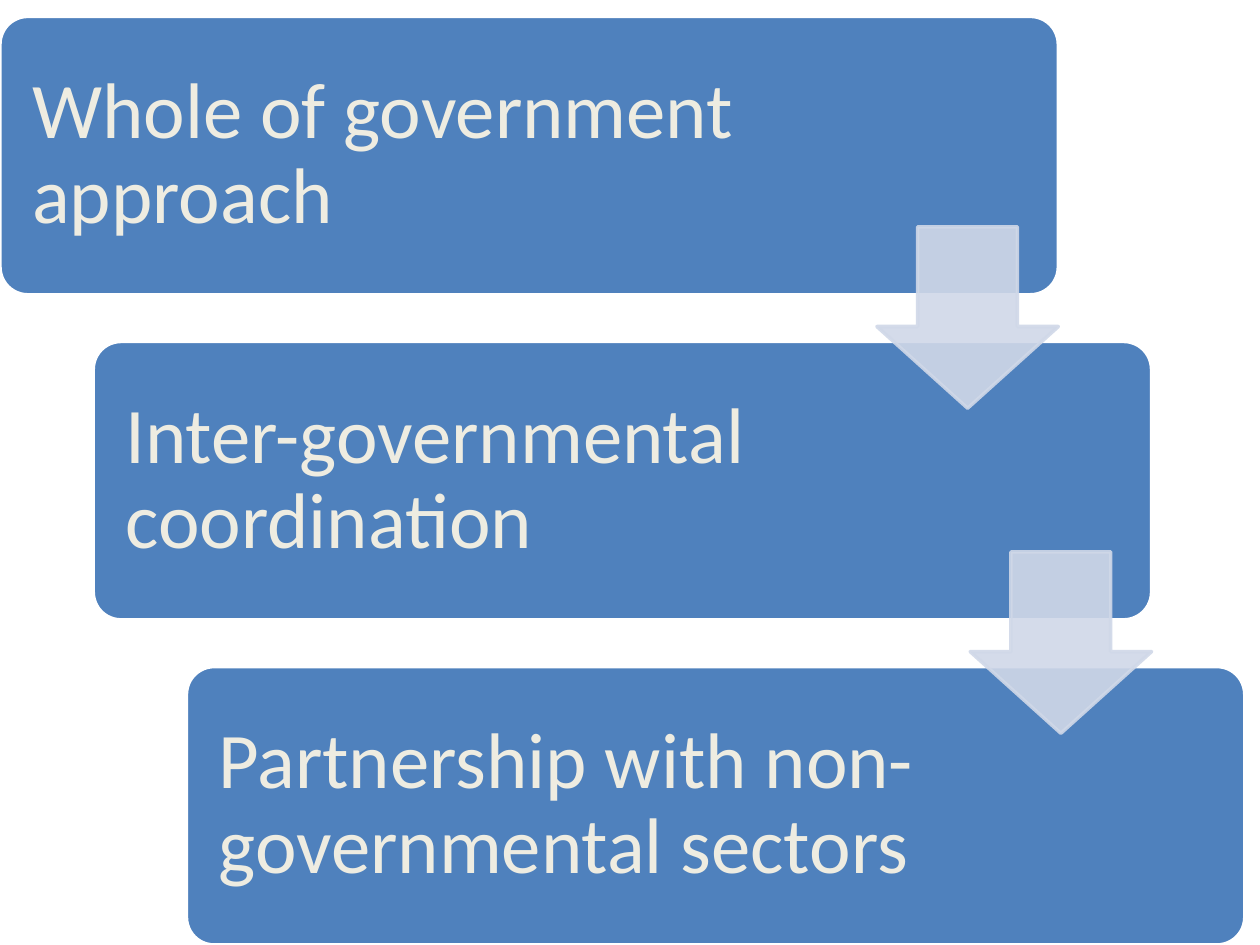
import dataclasses

import lxml.etree
import pptx
import pptx.dml.color
import pptx.enum.shapes
import pptx.enum.text
import pptx.oxml.ns
import pptx.util

SHAPE = pptx.enum.shapes.MSO_SHAPE


@dataclasses.dataclass(frozen=True)
class Theme:
    font: str = "Calibri"
    size: float = 45
    text: str = "EEECE1"
    step: str = "4F81BD"
    edge: str = "FFFFFF"
    arrow: str = "D0D8E8"
    line: float = 2
    inset: float = 0.19


def rgb(value):
    return pptx.dml.color.RGBColor.from_string(value)


def write(tf, text, *, font, size, color, spacing=0.9):
    p = tf.paragraphs[0]
    p.alignment = pptx.enum.text.PP_ALIGN.LEFT
    p.line_spacing = spacing
    r = p.add_run()
    r.text = text
    r.font.name = font
    r.font.size = pptx.util.Pt(size)
    r.font.color.rgb = rgb(color)


class Deck:
    COLUMNS, ROWS = 100, 75

    def __init__(self, theme):
        self.theme = theme
        self.prs = pptx.Presentation()
        self.prs.slide_width = pptx.util.Inches(10)
        self.prs.slide_height = pptx.util.Inches(7.5)
        self.s = self.prs.slides.add_slide(self.prs.slide_layouts[6])

    def place(self, col, row, cols, rows):
        x = self.prs.slide_width / self.COLUMNS
        y = self.prs.slide_height / self.ROWS
        return round(col * x), round(row * y), round(cols * x), round(rows * y)

    def shape(self, kind, area, adjustments, fill, line):
        sp = self.s.shapes.add_shape(kind, *self.place(*area))
        sp.shadow.inherit = False
        for i, value in enumerate(adjustments):
            sp.adjustments[i] = value
        sp.fill.solid()
        sp.fill.fore_color.rgb = rgb(fill)
        sp.line.color.rgb = rgb(line)
        sp.line.width = pptx.util.Pt(self.theme.line)
        return sp

    def step(self, *area):
        return self.shape(SHAPE.ROUNDED_RECTANGLE, area, [0.1],
                          self.theme.step, self.theme.edge)

    def arrow(self, *area, opacity=90):
        sp = self.shape(SHAPE.DOWN_ARROW, area, [0.55, 0.45],
                        self.theme.arrow, self.theme.arrow)
        qn = pptx.oxml.ns.qn
        for color in list(sp._element.spPr.iter(qn("a:srgbClr"))):
            lxml.etree.SubElement(color, qn("a:alpha"), val=str(opacity * 1000))
        return sp

    def label(self, text, *area):
        tf = self.s.shapes.add_textbox(*self.place(*area)).text_frame
        tf.word_wrap = True
        tf.vertical_anchor = pptx.enum.text.MSO_ANCHOR.MIDDLE
        inset = pptx.util.Inches(self.theme.inset)
        tf.margin_left = tf.margin_right = inset
        tf.margin_top = tf.margin_bottom = inset
        write(tf, text, font=self.theme.font, size=self.theme.size,
              color=self.theme.text)


def main():
    deck = Deck(Theme())
    steps = [
        ("Whole of government approach", 60.1),
        ("Inter-governmental coordination", 60.9),
        ("Partnership with non-governmental sectors", 60.9),
    ]
    shift, drop, pad = 7.4, 25.8, 0.65
    width, height, top = 84, 22.1, 1.3
    arrow, arrow_top = 14.4, 18

    for i, (text, text_width) in enumerate(steps):
        col, row = i * shift, top + i * drop
        deck.step(col, row, width, height)
        deck.label(text, col + pad, row + pad, text_width, height - 2 * pad)
    for i in range(len(steps) - 1):
        deck.arrow(width - arrow + i * shift, arrow_top + i * drop, arrow, arrow)

    deck.prs.save("out.pptx")


if __name__ == "__main__":
    main()
